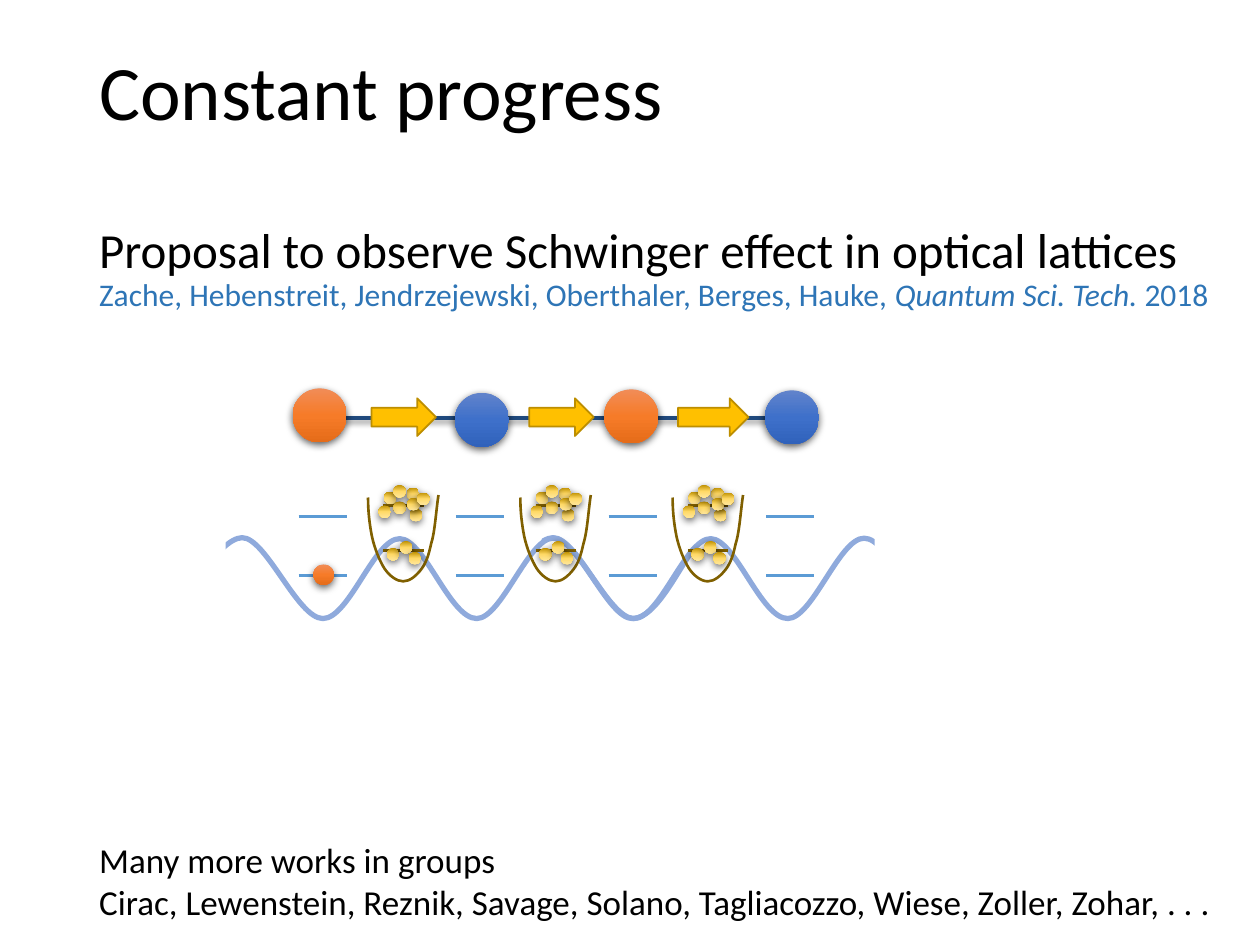
from pptx import Presentation, oxml, util as u
from pptx.dml.color import RGBColor
from pptx.enum import shapes, text
from pptx.oxml import ns

FONT = "Calibri"
BLACK = RGBColor(0x00, 0x00, 0x00)
WHITE = RGBColor(0xFF, 0xFF, 0xFF)
CITATION = RGBColor(0x2E, 0x75, 0xB6)
WAVE = RGBColor(0x8F, 0xAA, 0xDC)
LINK = RGBColor(0x1F, 0x49, 0x7D)
WELL = RGBColor(0x80, 0x60, 0x00)
LEVEL = RGBColor(0x5B, 0x9B, 0xD5)
GAUGE = RGBColor(0xFF, 0xC0, 0x00)
GAUGE_EDGE = RGBColor(0xBD, 0x8E, 0x00)
ORANGE = [RGBColor(0xF1, 0x8C, 0x57), RGBColor(0xF6, 0x7B, 0x28), RGBColor(0xE5, 0x6C, 0x19)]
BLUE = [RGBColor(0x61, 0x83, 0xCB), RGBColor(0x3E, 0x70, 0xCA), RGBColor(0x30, 0x62, 0xBB)]
GOLD = [RGBColor(0xBF, 0x90, 0x00), RGBColor(0xFF, 0xD9, 0x66), RGBColor(0xFF, 0xE6, 0x99)]

WAVE_POINTS = [
    (0, 12.34), (0.1, 12.19), (0.84, 10.85), (1.32, 10.84), (1.8, 10.83), (2.44, 12.47),
    (2.95, 12.47), (3.48, 12.47), (3.99, 10.85), (4.5, 10.86), (5, 10.87), (5.51, 12.47),
    (6.05, 12.47), (6.55, 12.47), (7.09, 10.85), (7.59, 10.85), (8.1, 10.85), (8.69, 12.47),
    (9.19, 12.47), (9.68, 12.47), (10.13, 11.43), (10.44, 11.05),
]
WELL_POINTS = [
    (0, 10.03), (0, 10.31), (0.03, 10.57), (0.08, 10.82), (0.13, 11.05), (0.23, 11.3),
    (0.33, 11.46), (0.43, 11.61), (0.58, 11.72), (0.71, 11.72), (0.84, 11.72), (0.97, 11.61),
    (1.07, 11.48), (1.17, 11.35), (1.22, 11.2), (1.27, 10.97), (1.35, 10.72), (1.37, 10.31),
    (1.42, 9.98),
]
BACK_ATOM = (0.32, 9.91)
FRONT_ATOMS = [
    (0.51, 10.11), (0.78, 9.83), (0.21, 10.19), (0.84, 10.26), (0.51, 9.78),
    (0.79, 10.04), (0.99, 9.93), (0.38, 11.05), (0.64, 10.91), (0.82, 11.13),
]


def add_text(page, lines, left, top, width, height, size, color=BLACK, wrap=True, spacing=None,
             inset=0.13):
    box = page.shapes.add_textbox(u.Cm(left), u.Cm(top), u.Cm(width), u.Cm(height))
    frame = box.text_frame
    frame.word_wrap = wrap
    frame.margin_top = u.Cm(inset)
    frame.vertical_anchor = text.MSO_ANCHOR.TOP
    for index, spans in enumerate(lines):
        para = frame.add_paragraph() if index else frame.paragraphs[0]
        para.line_spacing = spacing
        for words, italic in spans:
            span = para.add_run()
            span.text = words
            span.font.name = FONT
            span.font.size = u.Pt(size)
            span.font.italic = italic
            span.font.color.rgb = color


def set_shadow(element, blur, distance, alpha):
    for old in element.spPr.findall(ns.qn("a:effectLst")):
        element.spPr.remove(old)
    shadow = (f'<a:outerShdw blurRad="{u.Pt(blur)}" dist="{u.Pt(distance)}" dir="5400000" '
              f'rotWithShape="0"><a:srgbClr val="000000"><a:alpha val="{alpha * 1000}"/>'
              f'</a:srgbClr></a:outerShdw>') if alpha else ""
    element.spPr.append(oxml.parse_xml(f'<a:effectLst {ns.nsdecls("a")}>{shadow}</a:effectLst>'))


def add_shape(page, kind, left, top, width, height, fill, edge=None):
    shape = page.shapes.add_shape(kind, u.Cm(left), u.Cm(top), u.Cm(width), u.Cm(height))
    shape.shadow.inherit = False
    shape.fill.solid()
    shape.fill.fore_color.rgb = fill
    if edge is None:
        shape.line.fill.background()
    else:
        shape.line.color.rgb = edge
        shape.line.width = u.Pt(1)
    return shape


def add_ball(page, left, top, size, colors):
    ball = add_shape(page, shapes.MSO_SHAPE.OVAL, left, top, size, size, colors[1])
    stops = "".join(f'<a:gs pos="{index * 50000}"><a:srgbClr val="{color}"/></a:gs>'
                    for index, color in enumerate(colors))
    gradient = oxml.parse_xml(f'<a:gradFill {ns.nsdecls("a")} rotWithShape="1"><a:gsLst>{stops}'
                              f'</a:gsLst><a:lin ang="5400000" scaled="0"/></a:gradFill>')
    properties = ball.element.spPr
    properties.replace(properties.find(ns.qn("a:solidFill")), gradient)
    set_shadow(ball.element, 4.5, 1.5, 63)


def add_line(page, left, right, height, color, width, shadow=0):
    line = page.shapes.add_connector(shapes.MSO_CONNECTOR.STRAIGHT, u.Cm(left), u.Cm(height),
                                     u.Cm(right), u.Cm(height))
    line.line.color.rgb = color
    line.line.width = u.Pt(width)
    set_shadow(line.element, 3.1, 1.6, shadow)


def bend_segments(curve):
    outline = curve.element.spPr.find(".//" + ns.qn("a:path"))
    segments = outline.findall(ns.qn("a:lnTo"))
    for start in range(0, len(segments), 3):
        bend = oxml.parse_xml(f'<a:cubicBezTo {ns.nsdecls("a")}/>')
        for segment in segments[start:start + 3]:
            bend.append(segment[0])
            outline.remove(segment)
        outline.append(bend)


def add_curve(page, points, left, color, width):
    track = [(u.Cm(left + x), u.Cm(y)) for x, y in points]
    builder = page.shapes.build_freeform(*track[0], scale=1.0)
    builder.add_line_segments(track[1:], close=False)
    curve = builder.convert_to_shape()
    bend_segments(curve)
    curve.shadow.inherit = False
    curve.fill.background()
    curve.line.color.rgb = color
    curve.line.width = u.Pt(width)


def add_lattice(page):
    block = shapes.MSO_SHAPE.RECTANGLE
    add_curve(page, WAVE_POINTS, 9.83, WAVE, 3)
    add_shape(page, block, 7.39, 10.67, 3.53, 2.16, WHITE)
    add_curve(page, WAVE_POINTS, 3.56, WAVE, 3)
    add_shape(page, block, 3.28, 10.82, 1.27, 1.63, WHITE)
    add_shape(page, block, 17.63, 10.13, 3.28, 3.2, WHITE)


def add_chain(page):
    add_line(page, 6.78, 15.72, 8.43, LINK, 2, shadow=38)
    for left, top, colors in [(15.42, 7.87, BLUE), (5.9, 7.83, ORANGE),
                              (12.18, 7.85, ORANGE), (9.17, 7.92, BLUE)]:
        add_ball(page, left, top, 1.09, colors)
    for left, width in [(10.67, 1.3), (13.67, 1.42), (7.49, 1.3)]:
        add_shape(page, shapes.MSO_SHAPE.RIGHT_ARROW, left, 8.03, width, 0.76, GAUGE, GAUGE_EDGE)


def add_well(page, left):
    def add_atom(x, y):
        add_ball(page, left + x, y, 0.25, GOLD)

    add_atom(*BACK_ATOM)
    add_curve(page, WELL_POINTS, left, WELL, 1.5)
    for height in (10.19, 11.1):
        add_line(page, left + 0.31, left + 1.12, height, WELL, 1.5)
    for x, y in FRONT_ATOMS:
        add_atom(x, y)


def add_levels(page):
    for left in (6.02, 9.19, 12.27, 15.45):
        for height in (11.6, 10.41):
            add_line(page, left, left + 0.97, height, LEVEL, 1.5)
    add_ball(page, 6.32, 11.38, 0.41, ORANGE)


def main():
    deck = Presentation()
    deck.slide_width, deck.slide_height = u.Cm(25.4), u.Cm(19.05)
    page = deck.slides.add_slide(deck.slide_layouts[6])
    add_lattice(page)
    add_text(page, [[("Constant progress", False)]], 1.75, 1.02, 21.89, 3.68, 44, spacing=0.9,
             inset=0.07)
    add_text(page, [[("Proposal to observe Schwinger effect in optical lattices", False)]],
             1.75, 4.42, 24.05, 1.6, 28, spacing=0.9)
    add_text(page, [[("Many more works in groups", False)],
                    [("Cirac, Lewenstein, Reznik, Savage, Solano, Tagliacozzo, Wiese, "
                      "Zoller, Zohar, . . .", False)]],
             1.75, 16.77, 23.27, 1.96, 20, wrap=False)
    add_text(page, [[("Zache, Hebenstreit, Jendrzejewski, Oberthaler, Berges, Hauke, ", False),
                     ("Quantum Sci. Tech.", True), (" 2018", False)]],
             1.75, 5.41, 24, 1.02, 18, color=CITATION, wrap=False)
    add_chain(page)
    for index in range(3):
        add_well(page, 7.42 + 3.07 * index)
    add_levels(page)
    deck.save("out.pptx")


if __name__ == "__main__":
    main()
